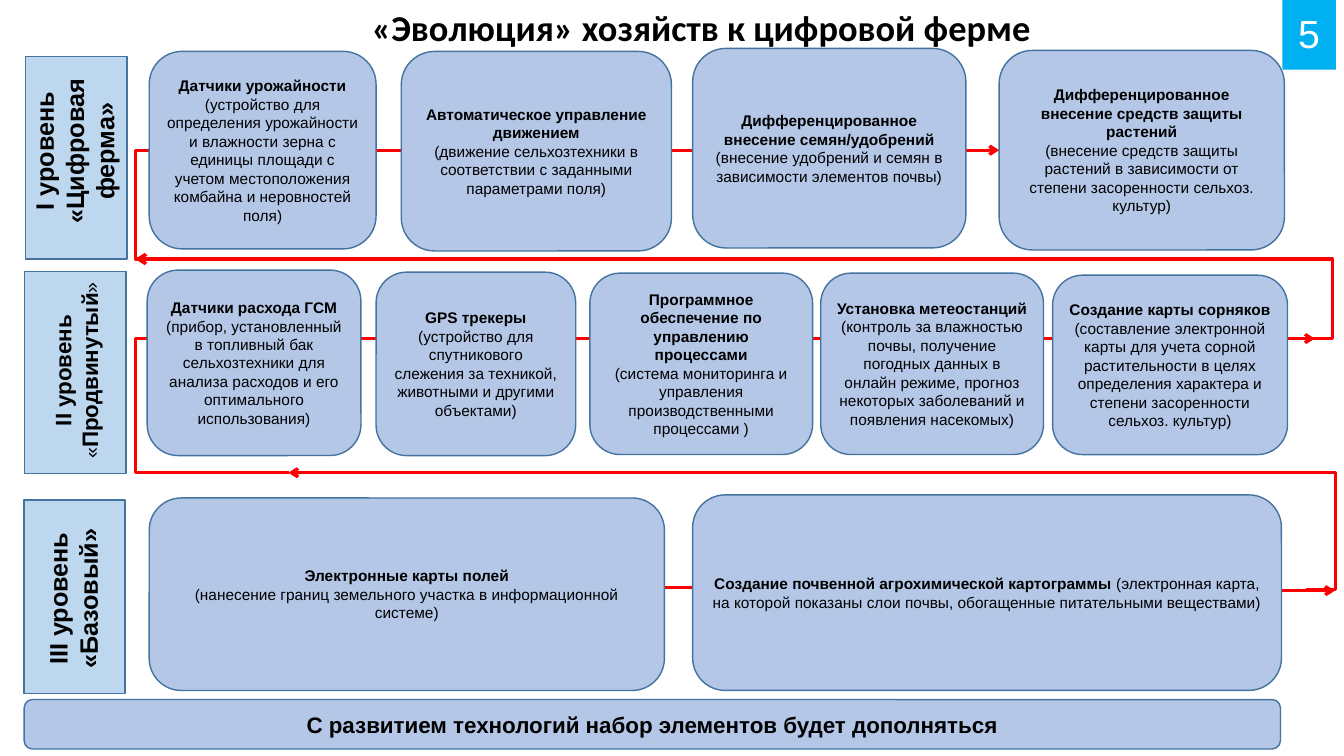
import pptx
import pptx.dml.color
import pptx.enum.shapes
import pptx.enum.text
import pptx.oxml
import pptx.oxml.ns
import pptx.util

Inches = pptx.util.Inches
Pt = pptx.util.Pt
RGBColor = pptx.dml.color.RGBColor
Shape = pptx.enum.shapes.MSO_SHAPE
Align = pptx.enum.text.PP_ALIGN
Anchor = pptx.enum.text.MSO_ANCHOR

BLACK = RGBColor(0, 0, 0)
WHITE = RGBColor(0xFF, 0xFF, 0xFF)
RED = RGBColor(0xFF, 0, 0)
LEVEL_BLUE = RGBColor(0xBD, 0xD7, 0xEE)
CARD_BLUE = RGBColor(0xB4, 0xC7, 0xE7)
BORDER_BLUE = RGBColor(0x43, 0x73, 0x9E)
BADGE_BLUE = RGBColor(0x00, 0xB0, 0xF0)

ROUTES = [
    ((1.46, 2.57), (9.91, 1.49), 2.25, -0.014),
    ((12.95, 3.36), (1.34, 2.57), 2.5, -0.023),
    ((2.87, 4.69), (13.04, 3.36), 2.25, -0.15),
    ((12.95, 5.85), (2.86, 4.69), 2.25, -0.029),
    ((2.82, 5.83), (13.24, 5.86), 2.25, 0.5),
]

LEVELS = [
    ((-0.25, 1.06, 2.01, 1.01), (-0.21, 1.01, 1.91, 0.98), 18,
     [("I уровень «Цифровая ферма»", True, 18)]),
    ((-0.26, 3.19, 2.01, 1.01), (-0.24, 3.37, 2, 0.61), 16,
     [("II уровень", True, 16), None, ("«", False, 14),
      ("Продвинутый", True, 16), ("»", False, 14)]),
    ((-0.22, 5.42, 1.92, 1), (-0.08, 5.6, 1.62, 0.68), 18,
     [("III уровень «Базовый»", True, 18)]),
]

CARDS = [
    ((1.48, 0.51, 2.25, 1.96), "Датчики урожайности",
     "(устройство для определения урожайности и влажности зерна с единицы "
     "площади с учетом местоположения комбайна и неровностей поля)"),
    ((3.98, 0.51, 2.68, 1.98), "Автоматическое управление движением",
     "(движение сельхозтехники в соответствии с заданными параметрами поля)"),
    ((6.87, 0.48, 2.71, 1.98), "Дифференцированное внесение семян/удобрений",
     "(внесение удобрений и семян в зависимости элементов почвы)"),
    ((9.91, 0.5, 2.83, 1.98), "Дифференцированное внесение средств защиты растений",
     "(внесение средств защиты растений в зависимости от степени "
     "засоренности сельхоз. культур)"),
    ((1.46, 2.68, 2.12, 1.84), "Датчики расхода ГСМ",
     "(прибор, установленный в топливный бак сельхозтехники для анализа "
     "расходов и его оптимального использования)"),
    ((3.73, 2.7, 1.98, 1.82), "GPS трекеры",
     "(устройство для спутникового слежения за техникой, животными и "
     "другими объектами)"),
    ((5.85, 2.71, 2.21, 1.8), "Программное обеспечение по управлению процессами",
     "(система мониторинга и управления производственными процессами )"),
    ((8.14, 2.71, 2.21, 1.8), "Установка метеостанций",
     "(контроль за влажностью почвы, получение погодных данных в онлайн "
     "режиме, прогноз некоторых заболеваний и появления насекомых)"),
    ((1.48, 4.94, 5.11, 1.91), "Электронные карты полей",
     "(нанесение границ земельного участка в информационной системе)"),
]

INLINE_CARDS = [
    ((10.44, 2.73, 2.33, 1.78), "Создание карты сорняков ",
     "(составление электронной карты для учета сорной растительности в целях "
     "определения характера и степени засоренности сельхоз. культур)"),
    ((6.87, 4.91, 5.84, 1.94), "Создание почвенной агрохимической картограммы ",
     "(электронная карта, на которой показаны слои почвы, обогащенные "
     "питательными веществами)"),
]


def write(shape, paragraphs, size, color=BLACK, font="Arial",
          align=Align.CENTER, anchor=Anchor.MIDDLE, inset=(0.07, 0.04)):
    frame = shape.text_frame
    frame.word_wrap = True
    frame.vertical_anchor = anchor
    frame.margin_left = frame.margin_right = Inches(inset[0])
    frame.margin_top = frame.margin_bottom = Inches(inset[1])
    for index, pieces in enumerate(paragraphs):
        paragraph = frame.add_paragraph() if index else frame.paragraphs[0]
        paragraph.alignment = align
        paragraph.font.name = font
        paragraph.font.size = Pt(size)
        paragraph.font.bold = pieces[0][1]
        paragraph.font.color.rgb = color
        for piece in pieces:
            if piece is None:
                paragraph.add_line_break()
                continue
            text, bold, piece_size = piece
            run = paragraph.add_run()
            run.text = text
            if bold != pieces[0][1]:
                run.font.bold = bold
            if piece_size != size:
                run.font.size = Pt(piece_size)


def add_panel(slide, kind, box, fill, border=BORDER_BLUE):
    panel = slide.shapes.add_shape(kind, *map(Inches, box))
    panel.shadow.inherit = False
    panel.fill.solid()
    panel.fill.fore_color.rgb = fill
    if border is None:
        panel.line.fill.background()
    else:
        panel.line.color.rgb = border
        panel.line.width = Pt(1)
    return panel


def add_label(slide, box):
    return slide.shapes.add_textbox(*map(Inches, box))


def add_route(slide, start, end, width, bend):
    route = slide.shapes.add_connector(
        pptx.enum.shapes.MSO_CONNECTOR.ELBOW, *map(Inches, start + end))
    route.line.color.rgb = RED
    route.line.width = Pt(width)
    properties = route._element.spPr
    guides = properties.find(pptx.oxml.ns.qn("a:prstGeom")).get_or_add_avLst()
    namespace = pptx.oxml.ns.nsdecls("a")
    guides.append(pptx.oxml.parse_xml(
        f'<a:gd {namespace} name="adj1" fmla="val {round(bend * 100000)}"/>'))
    route.line._get_or_add_ln().append(
        pptx.oxml.parse_xml(f'<a:tailEnd {namespace} type="arrow"/>'))
    properties.append(pptx.oxml.parse_xml(f"<a:effectLst {namespace}/>"))


def add_level(slide, panel_box, label_box, size, pieces):
    panel = add_panel(slide, Shape.RECTANGLE, panel_box, LEVEL_BLUE)
    label = add_label(slide, label_box)
    panel.rotation = label.rotation = 270
    write(label, [pieces], size, anchor=Anchor.TOP, inset=(0.07, 0.03))


def add_card(slide, box, paragraphs, size=11):
    card = add_panel(slide, Shape.ROUNDED_RECTANGLE, box, CARD_BLUE)
    write(card, paragraphs, size)


def main():
    deck = pptx.Presentation()
    deck.slide_width = Inches(13.33)
    deck.slide_height = Inches(7.5)
    slide = deck.slides.add_slide(deck.slide_layouts[6])

    for route in ROUTES:
        add_route(slide, *route)
    for level in LEVELS:
        add_level(slide, *level)

    title = add_label(slide, (1.26, 0.01, 11.4, 0.51))
    write(title, [[("«Эволюция» хозяйств к цифровой ферме", True, 26)]], 26,
          font="Calibri", anchor=Anchor.TOP)

    for box, heading, detail in CARDS:
        add_card(slide, box, [[(heading, True, 11)], [(detail, False, 11)]])
    for box, heading, detail in INLINE_CARDS:
        add_card(slide, box, [[(heading, True, 11), (detail, False, 11)]])

    conclusion = "С развитием технологий набор элементов будет дополняться"
    add_card(slide, (0.24, 6.94, 12.46, 0.49), [[(conclusion, True, 16)]], 16)

    add_panel(slide, Shape.RECTANGLE, (12.72, 0, 0.53, 0.69), BADGE_BLUE, None)
    page_number = add_label(slide, (12.35, 0.13, 0.84, 0.4))
    write(page_number, [[("5", False, 28)]], 28, WHITE,
          align=Align.RIGHT, inset=(0.1, 0.05))

    deck.save("out.pptx")


if __name__ == "__main__":
    main()
